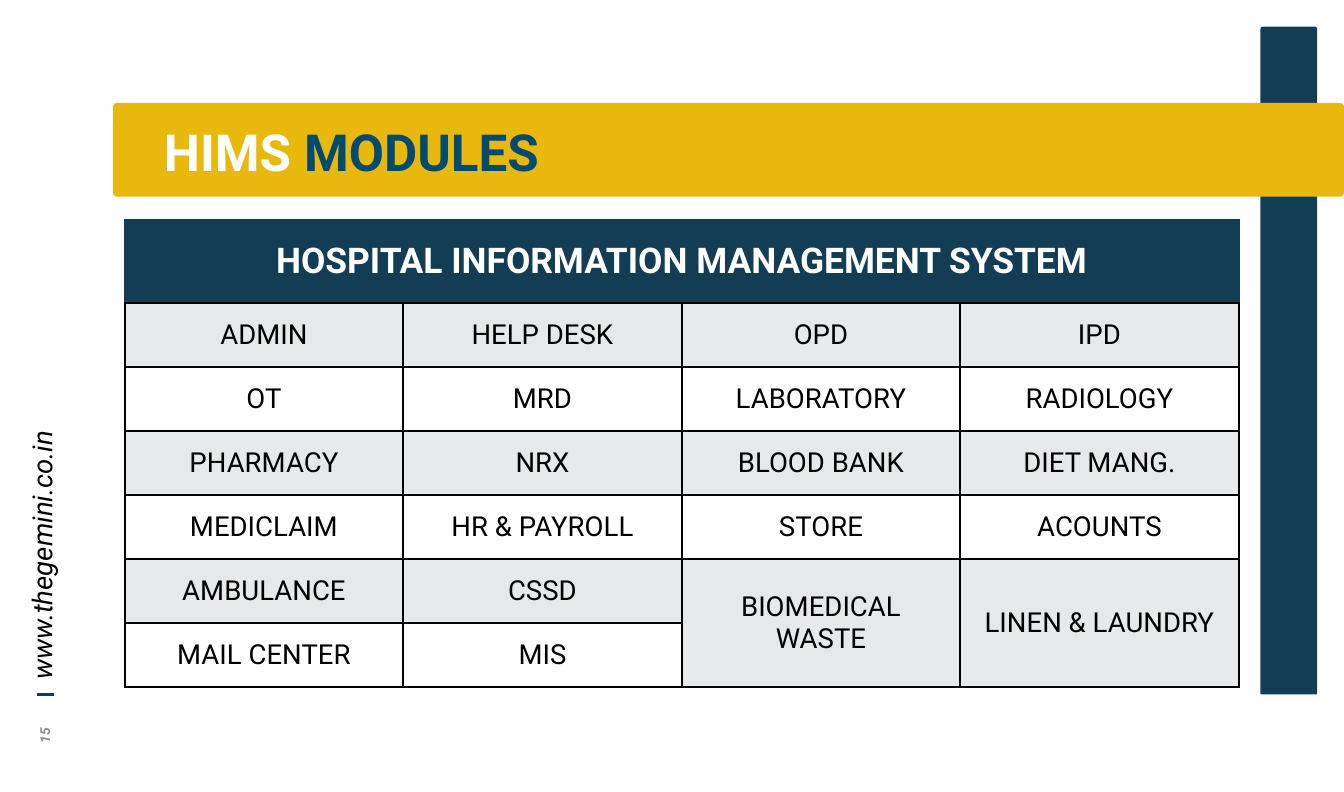
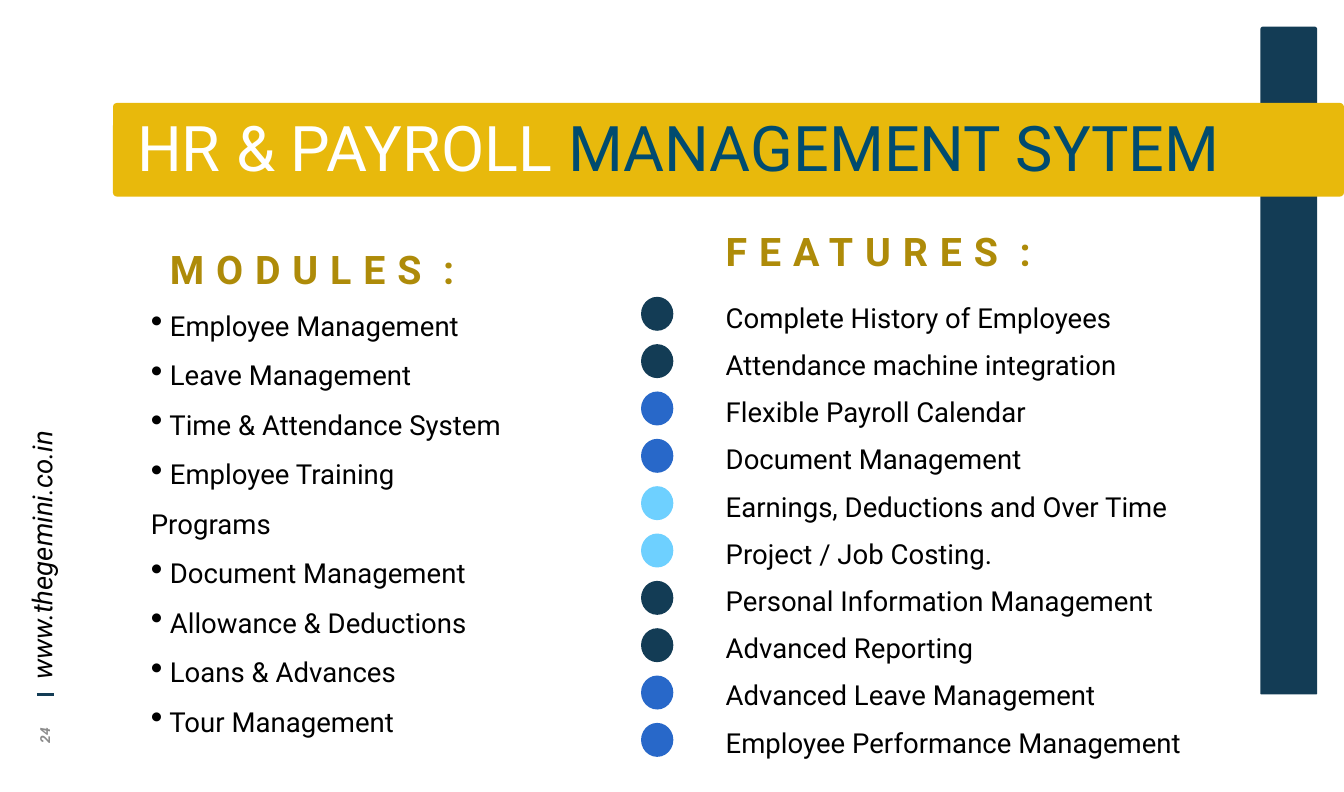
from lxml.etree import SubElement
from pptx import Presentation
from pptx.dml.color import RGBColor
from pptx.enum.shapes import MSO_CONNECTOR, MSO_SHAPE
from pptx.enum.text import MSO_ANCHOR, PP_ALIGN
from pptx.oxml.ns import qn
from pptx.util import Cm, Pt

FONT = "Roboto"
NAVY = RGBColor(0x13, 0x3C, 0x55)
GOLD = RGBColor(0xE8, 0xB9, 0x0C)
DARK_GOLD = RGBColor(0xAE, 0x8B, 0x09)
TITLE_BLUE = RGBColor(0x00, 0x4B, 0x6F)
BLUE = RGBColor(0x28, 0x68, 0xC9)
SKY = RGBColor(0x6E, 0xD0, 0xFF)
GREY = RGBColor(0x8C, 0x8C, 0x8C)
PALE = RGBColor(0xE7, 0xE8, 0xE9)
WHITE = RGBColor(0xFF, 0xFF, 0xFF)
BLACK = RGBColor(0, 0, 0)

WEBSITE = "www.thegemini.co.in"
TABLE_HEADING = "HOSPITAL INFORMATION MANAGEMENT SYSTEM"
# None continues the cell above
HIMS_MODULES = [
    ("ADMIN", "HELP DESK", "OPD", "IPD"),
    ("OT", "MRD", "LABORATORY", "RADIOLOGY"),
    ("PHARMACY", "NRX", "BLOOD BANK", "DIET MANG."),
    ("MEDICLAIM", "HR & PAYROLL", "STORE", "ACOUNTS"),
    ("AMBULANCE", "CSSD", "BIOMEDICAL WASTE", "LINEN & LAUNDRY"),
    ("MAIL CENTER", "MIS", None, None),
]
PAYROLL_MODULES = [
    "Employee Management",
    "Leave Management",
    "Time & Attendance System",
    "Employee Training Programs",
    "Document Management",
    "Allowance & Deductions",
    "Loans & Advances",
    "Tour Management",
]
PAYROLL_FEATURES = [
    "Complete History of Employees",
    "Attendance machine integration",
    "Flexible Payroll Calendar",
    "Document Management",
    "Earnings, Deductions and Over Time",
    "Project / Job Costing.",
    "Personal Information Management",
    "Advanced Reporting",
    "Advanced Leave Management",
    "Employee Performance Management",
]
DOT_COLOURS = (NAVY, BLUE, SKY)


def box(left, top, width, height):
    return Cm(left), Cm(top), Cm(width), Cm(height)


def add_text(frame, *runs, size=14, colour=BLACK, bold=False, italic=False,
             align=PP_ALIGN.LEFT, line=None, indent=0, bullet=False):
    """Add one paragraph; a run is a text or (text, colour, letter spacing in pt)."""
    paragraph = frame.paragraphs[0]
    if paragraph.runs:
        paragraph = frame.add_paragraph()
    properties = paragraph._p.get_or_add_pPr()
    properties.set("marL", str(Cm(indent)))
    properties.set("indent", "0")
    if bullet:
        SubElement(properties, qn("a:buSzPct"), val="125000")
        SubElement(properties, qn("a:buChar"), char="•")
    paragraph.alignment = align
    if line:
        paragraph.line_spacing = line
    for item in runs:
        text, run_colour, spacing = (item, colour, 0) if isinstance(item, str) else item
        run = paragraph.add_run()
        run.text = text
        font = run.font
        font.name, font.size, font.bold, font.italic = FONT, Pt(size), bold, italic
        font.color.rgb = run_colour
        if spacing:
            font._element.set("spc", str(spacing * 100))


def set_frame(frame, anchor=MSO_ANCHOR.TOP, inset=None):
    frame.word_wrap = True
    frame.vertical_anchor = anchor
    if inset is not None:
        frame.margin_left = frame.margin_right = Cm(inset)
        frame.margin_top = frame.margin_bottom = Cm(inset)
    return frame


def add_frame(slide, place, rotation=0, **options):
    holder = slide.shapes.add_textbox(*box(*place))
    holder.rotation = rotation
    return set_frame(holder.text_frame, **options)


def add_filled(slide, kind, place, colour, *corners):
    shape = slide.shapes.add_shape(kind, *box(*place))
    shape.shadow.inherit = False
    shape.fill.solid()
    shape.fill.fore_color.rgb = colour
    shape.line.fill.background()
    for index, corner in enumerate(corners):
        shape.adjustments[index] = corner
    return shape


def move_bands_to_layout(slide):
    """Draw the shared bands and dash, then hand them to the slide's layout."""
    side = add_filled(slide, MSO_SHAPE.ROUND_2_SAME_RECTANGLE,
                      (22.63, 0.48, 1.02, 11.99), NAVY, 0.043, 0.021)
    title_band = add_filled(slide, MSO_SHAPE.ROUNDED_RECTANGLE,
                            (2.03, 1.85, 22.1, 1.68), GOLD, 0.042)
    dash = slide.shapes.add_connector(MSO_CONNECTOR.STRAIGHT,
                                      Cm(0.66), Cm(12.47), Cm(0.97), Cm(12.47))
    dash.line.color.rgb = NAVY
    dash.line.width = Pt(1.25)
    SubElement(dash.element.spPr, qn("a:effectLst"))
    for part in (side, title_band, dash):
        slide.slide_layout.shapes.element.append(part.element)


def add_slide(deck, number, title_runs, title_place, title_inset=None, **title_format):
    slide = deck.slides.add_slide(deck.slide_layouts[5])
    title = slide.shapes.title
    title.left, title.top, title.width, title.height = box(*title_place)
    add_text(set_frame(title.text_frame, inset=title_inset), *title_runs,
             line=0.9, **title_format)
    middle = dict(rotation=270, anchor=MSO_ANCHOR.MIDDLE, inset=0)
    add_text(add_frame(slide, (0.33, 13.06, 0.94, 0.3), **middle), str(number),
             size=7, colour=GREY, bold=True, italic=True, align=PP_ALIGN.CENTER)
    add_text(add_frame(slide, (-4.5, 6.65, 10.49, 0.61), **middle), WEBSITE, italic=True)
    return slide


def style_cell(cell, fill, edge):
    """Set fill and 1 pt borders; edge colours the left, right and top sides."""
    cell.vertical_anchor = MSO_ANCHOR.MIDDLE
    properties = cell._tc.get_or_add_tcPr()
    for side, colour in (("L", edge), ("R", edge), ("T", edge), ("B", BLACK)):
        border = SubElement(properties, qn(f"a:ln{side}"), w=str(Pt(1)))
        SubElement(SubElement(border, qn("a:solidFill")), qn("a:srgbClr"), val=str(colour))
    cell.fill.solid()
    cell.fill.fore_color.rgb = fill


def add_module_table(slide):
    rows, columns = len(HIMS_MODULES) + 1, len(HIMS_MODULES[0])
    heading_height, row_height = 1.5, 1.15
    place = box(2.24, 3.94, 5 * columns, heading_height + row_height * (rows - 1))
    table = slide.shapes.add_table(rows, columns, *place).table
    for index, row in enumerate(table.rows):
        row.height = Cm(row_height if index else heading_height)
        for cell in row.cells:
            fill = PALE if index % 2 else WHITE
            style_cell(cell, fill if index else NAVY, BLACK if index else NAVY)
    table.cell(0, 0).merge(table.cell(0, columns - 1))
    add_text(table.cell(0, 0).text_frame, TABLE_HEADING, size=18, colour=WHITE,
             bold=True, align=PP_ALIGN.CENTER)
    for r, names in enumerate(HIMS_MODULES, 1):
        for c, name in enumerate(names):
            if name is None:
                table.cell(r - 1, c).merge(table.cell(r, c))
            else:
                add_text(table.cell(r, c).text_frame, name, align=PP_ALIGN.CENTER)


def add_heading(frame, name, **options):
    add_text(frame, (name, DARK_GOLD, 6), " :", size=20, colour=DARK_GOLD,
             bold=True, **options)


def add_payroll_lists(slide):
    modules = add_frame(slide, (2.46, 3.43, 7.11, 9.14))
    add_heading(modules, "MODULES", line=2.0, indent=0.34)
    for module in PAYROLL_MODULES:
        add_text(modules, " " + module, line=1.5, bullet=True)

    add_heading(add_frame(slide, (12.78, 3.96, 8.59, 1.15)), "FEATURES")
    features = add_frame(slide, (12.52, 4.98, 9.47, 8.81), anchor=MSO_ANCHOR.MIDDLE)
    features.margin_left = Cm(0.51)
    for index, feature in enumerate(PAYROLL_FEATURES):
        add_text(features, feature, line=Pt(24))
        add_filled(slide, MSO_SHAPE.OVAL, (11.51, 5.33 + 0.85 * index, 0.58, 0.61),
                   DOT_COLOURS[index // 2 % len(DOT_COLOURS)])


def main():
    deck = Presentation()
    deck.slide_width, deck.slide_height = Cm(24.13), Cm(14.22)

    hims = add_slide(deck, 15, ["HIMS", (" MODULES", TITLE_BLUE, 0)],
                     (2.69, 2.16, 21.44, 0.89), size=26, colour=WHITE, bold=True)
    move_bands_to_layout(hims)
    add_module_table(hims)

    payroll = add_slide(deck, 24, ["HR & PAYROLL ", ("MANAGEMENT SYTEM", TITLE_BLUE, 0)],
                        (2.46, 2.11, 21.67, 1.45), title_inset=0, size=32, colour=WHITE)
    add_payroll_lists(payroll)
    deck.save("out.pptx")


if __name__ == "__main__":
    main()
